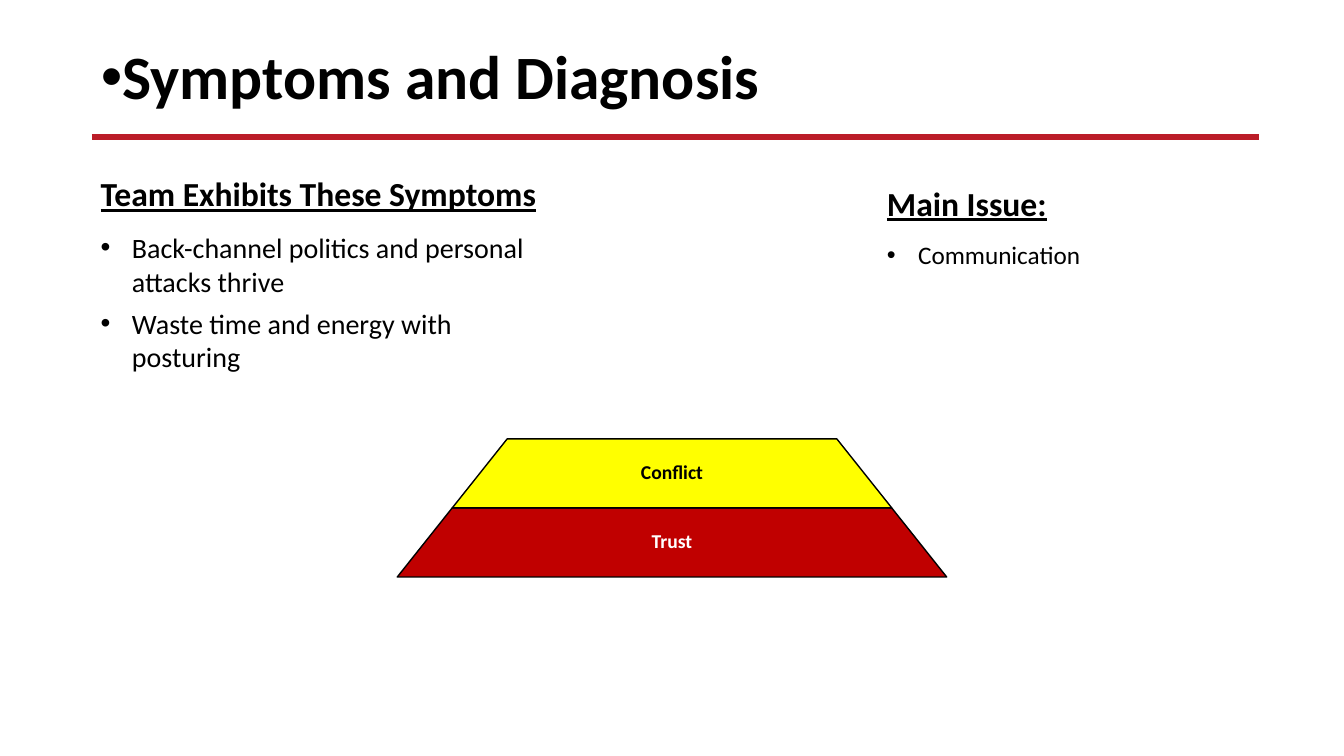
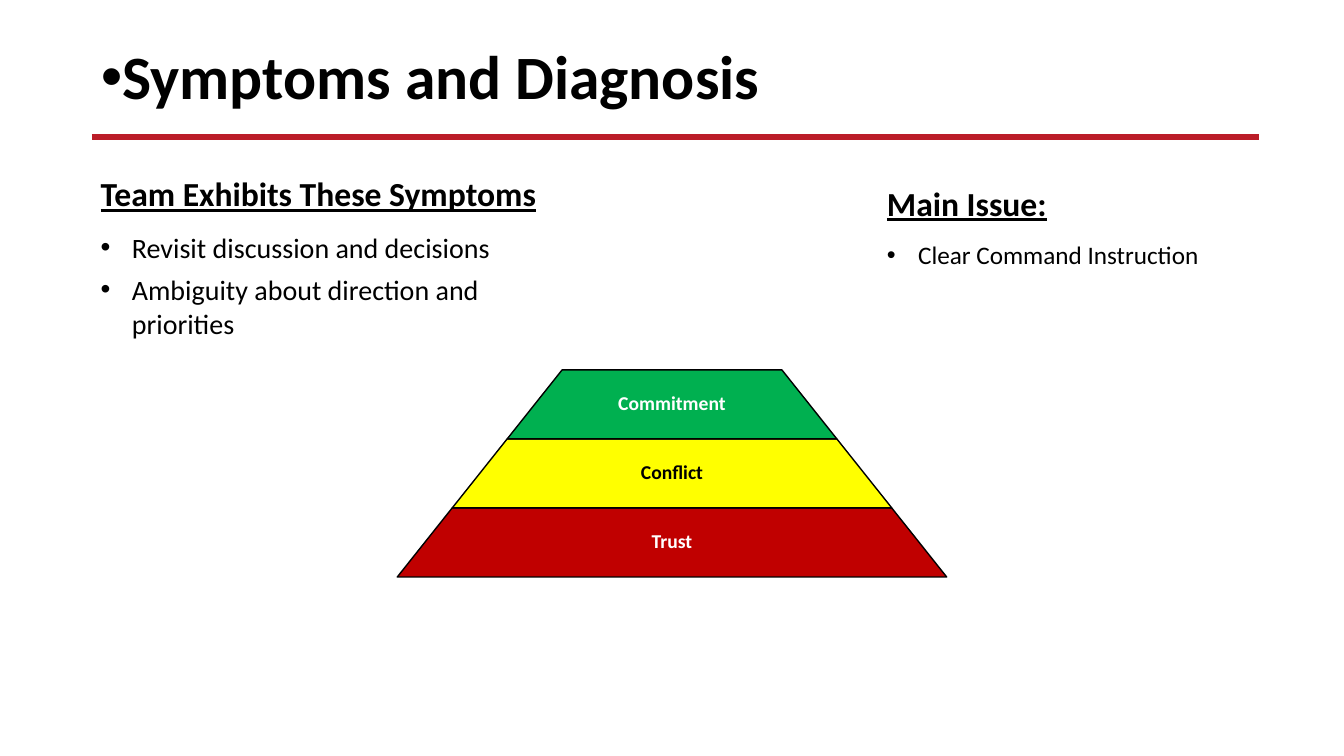
"""Build two slides that pair team symptoms with a growing pyramid."""
from lxml import etree
from pptx import Presentation, util as u
from pptx.dml.color import RGBColor
from pptx.enum import shapes, text
from pptx.oxml import ns

COLORS = {"black": "000000", "white": "FFFFFF", "rule": "BB1D28",
          "red": "C00000", "yellow": "FFFF00", "green": "00B050"}
TITLE = {"size": u.Pt(44), "bold": True}
HEADING = {"size": u.Pt(24), "bold": True, "underline": True}
LABEL = {"size": u.Pt(14), "bold": True}
LEVELS = [("Trust", "red", "white"), ("Conflict", "yellow", "black"),
          ("Commitment", "green", "white")]
SLIDES = [
    {"symptoms": ["Back-channel politics and personal attacks thrive",
                  "Waste time and energy with posturing"],
     "issue": "Communication", "levels": 2},
    {"symptoms": ["Revisit discussion and decisions",
                  "Ambiguity about direction and priorities"],
     "issue": "Clear Command Instruction", "levels": 3},
]

deck = Presentation()
deck.slide_width, deck.slide_height = u.Inches(13.33), u.Inches(7.5)
COL, ROW = deck.slide_width / 100, deck.slide_height / 100
BASE_WIDTH, BASE_ROW, LEVEL_ROWS = 40.88, 76.32, 9.13
LEFT = 6.75


def place(left, top, width, height):
    return [int(left * COL), int(top * ROW), int(width * COL), int(height * ROW)]


def write(para, words, style, color="black", indent=None):
    if indent is not None:
        props = para._p.get_or_add_pPr()
        props.set("marL", str(indent))
        props.set("indent", str(-indent))
        etree.SubElement(props, ns.qn("a:buFont"), typeface="Arial")
        etree.SubElement(props, ns.qn("a:buChar"), char="•")
    span = para.add_run()
    span.text = words
    for name, value in {"name": "Calibri", **style}.items():
        setattr(span.font, name, value)
    span.font.color.rgb = RGBColor.from_string(COLORS[color])


layout = deck.slide_layouts.get_by_name("Title Only")
pages = [deck.slides.add_slide(layout) for _ in SLIDES]

x, y, width, _ = place(6.83, 18.13, 86.85, 0)
rule = pages[0].shapes.add_connector(shapes.MSO_CONNECTOR.STRAIGHT, x, y, x + width, y)
rule.line.width = u.Pt(4.5)
rule.line.color.rgb = RGBColor.from_string(COLORS["rule"])
etree.SubElement(rule.element.spPr, ns.qn("a:effectLst"))
rule.element.nvCxnSpPr.cNvPr.set("id", "20")
layout.shapes.element.append(rule.element)

for page, content in zip(pages, SLIDES):
    title = page.shapes.title
    title.left, title.top, title.width, title.height = place(LEFT, 5.47, 67.5, 12.27)
    title.text_frame.vertical_anchor = text.MSO_ANCHOR.TOP
    title.text_frame.auto_size = text.MSO_AUTO_SIZE.NONE
    para = title.text_frame.paragraphs[0]
    para.alignment, para.line_spacing = text.PP_ALIGN.LEFT, 0.9
    write(para, "Symptoms and Diagnosis", TITLE, indent=0)

    columns = [
        (place(LEFT, 22.27, 34.43, 28), "Team Exhibits These Symptoms", content["symptoms"], 20),
        (place(65.25, 23.47, 25, 13), "Main Issue:", [content["issue"]], 18),
    ]
    for position, heading, items, size in columns:
        frame = page.shapes.add_textbox(*position).text_frame
        frame.word_wrap = True
        para = frame.paragraphs[0]
        para.space_after = u.Pt(12)
        write(para, heading, HEADING)
        for item in items:
            para = frame.add_paragraph()
            para.space_after = u.Pt(6)
            write(para, item, {"size": u.Pt(size)}, indent=u.Inches(0.31))

    for step, (label, fill, ink) in enumerate(LEVELS[:content["levels"]]):
        span_cols = BASE_WIDTH * (5 - step) / 5
        position = place(50 - span_cols / 2, BASE_ROW - LEVEL_ROWS * (step + 1),
                         span_cols, LEVEL_ROWS)
        level = page.shapes.add_shape(shapes.MSO_SHAPE.TRAPEZOID, *position)
        slant = BASE_WIDTH / 10 * COL
        level.adjustments[0] = slant / level.height
        level.shadow.inherit = False
        level.fill.solid()
        level.fill.fore_color.rgb = RGBColor.from_string(COLORS[fill])
        level.line.color.rgb = RGBColor.from_string(COLORS["black"])
        level.line.width = u.Pt(1)
        frame = level.text_frame
        frame.vertical_anchor = text.MSO_ANCHOR.MIDDLE
        for side in ("left", "right", "top", "bottom"):
            setattr(frame, f"margin_{side}", u.Inches(0.02))
        frame.margin_bottom += int(2 * level.height * slant / (3 * level.width))
        para = frame.paragraphs[0]
        para.alignment, para.line_spacing = text.PP_ALIGN.CENTER, 0.9
        write(para, label, LABEL, ink)

deck.save("out.pptx")
